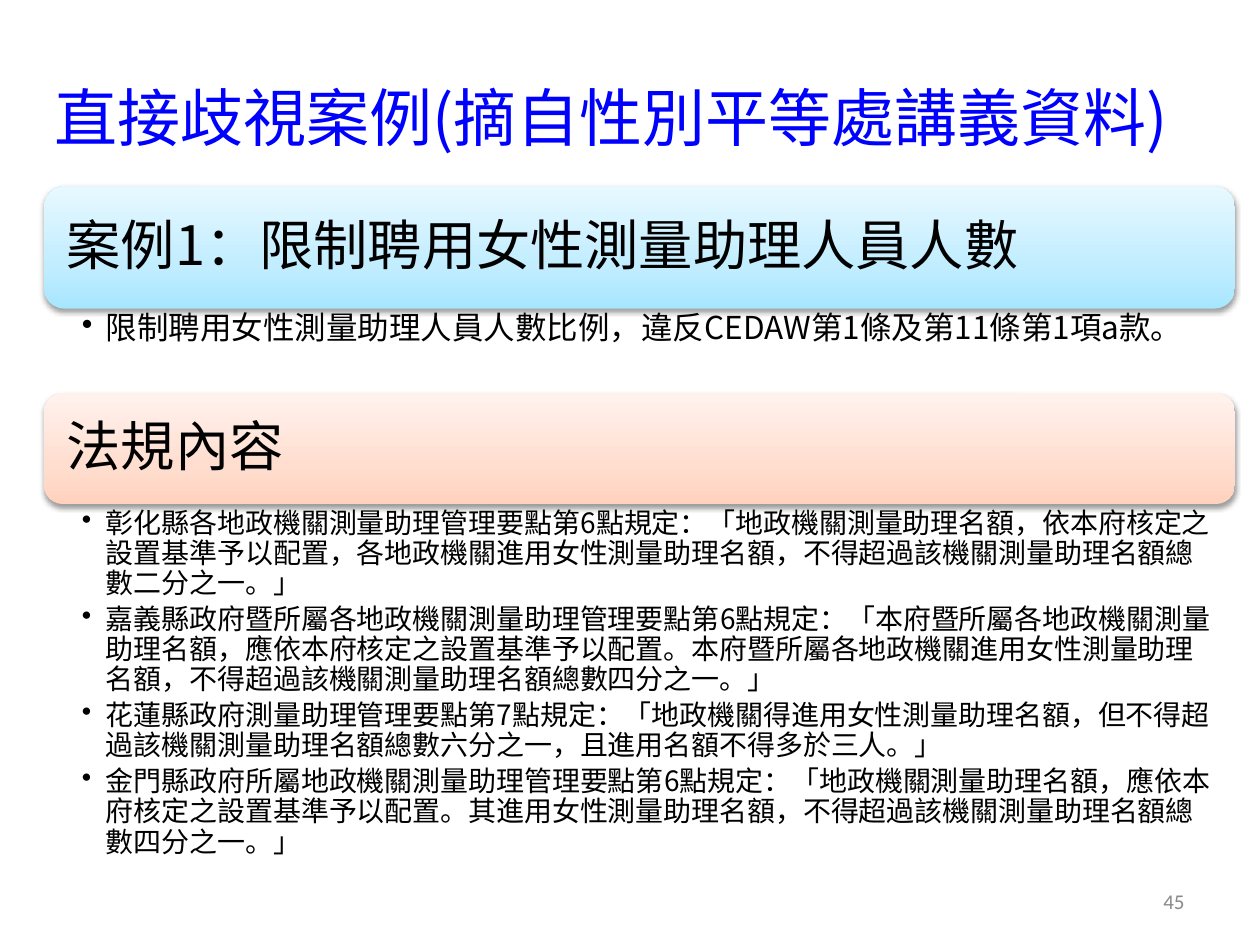
"""Build a slide on direct discrimination cases and the rules behind them."""
from lxml import etree
from pptx import Presentation
from pptx.dml.color import RGBColor
from pptx.enum.shapes import MSO_SHAPE
from pptx.enum.text import MSO_ANCHOR, MSO_AUTO_SIZE, PP_ALIGN
from pptx.oxml import parse_xml
from pptx.oxml.ns import qn
from pptx.util import Inches, Pt

ROUNDED = MSO_SHAPE.ROUNDED_RECTANGLE
TOP, MIDDLE = MSO_ANCHOR.TOP, MSO_ANCHOR.MIDDLE
LEFT, CENTER, RIGHT = PP_ALIGN.LEFT, PP_ALIGN.CENTER, PP_ALIGN.RIGHT
BLACK = RGBColor(0, 0, 0)
BLUE = RGBColor(0, 0, 255)
GRAY = RGBColor(0x89, 0x89, 0x89)
CJK = "Noto Sans CJK SC"
DRAWING = "http://schemas.openxmlformats.org/drawingml/2006/main"

TITLE = "直接歧視案例(摘自性別平等處講義資料)"
PAGE_NUMBER = "45"
SECTIONS = [
    {
        "heading": "案例1：限制聘用女性測量助理人員人數",
        "bar": (1.48, 0.97),
        "colors": ("A7E6FF", "C1EDFF", "E7F8FF"),
        "body": (2.45, 0.69),
        "size": 18,
        "insets": (0.3, 0.03, 0.14, 0.03),
        "points": ["限制聘用女性測量助理人員人數比例，違反CEDAW第1條及第11條第1項a款。"],
    },
    {
        "heading": "法規內容",
        "bar": (3.12, 0.88),
        "colors": ("FFD2BD", "FFDED0", "FFF2ED"),
        "body": (4.02, 3.1),
        "size": 16,
        "insets": (0.3, 0.02, 0.12, 0.02),
        "points": [
            "彰化縣各地政機關測量助理管理要點第6點規定：「地政機關測量助理名額，依本府核定之設置基準予以配置，各地政機關進用女性測量助理名額，不得超過該機關測量助理名額總數二分之一。」",
            "嘉義縣政府暨所屬各地政機關測量助理管理要點第6點規定：「本府暨所屬各地政機關測量助理名額，應依本府核定之設置基準予以配置。本府暨所屬各地政機關進用女性測量助理名額，不得超過該機關測量助理名額總數四分之一。」",
            "花蓮縣政府測量助理管理要點第7點規定：「地政機關得進用女性測量助理名額，但不得超過該機關測量助理名額總數六分之一，且進用名額不得多於三人。」",
            "金門縣政府所屬地政機關測量助理管理要點第6點規定：「地政機關測量助理名額，應依本府核定之設置基準予以配置。其進用女性測量助理名額，不得超過該機關測量助理名額總數四分之一。」",
        ],
    },
]
BAR_LEFT, BAR_WIDTH, BAR_PADDING = 0.35, 9.45, 0.05
BULLET_INDENT = 0.19


def write_text(box, lines, size, color=BLACK, font=CJK, align=LEFT, anchor=TOP,
               insets=(0.1, 0.05, 0.1, 0.05), spacing=None, after=0, bullet=False):
    frame = box.text_frame
    frame.word_wrap = True
    frame.auto_size = MSO_AUTO_SIZE.NONE
    frame.vertical_anchor = anchor
    (frame.margin_left, frame.margin_top,
     frame.margin_right, frame.margin_bottom) = map(Inches, insets)
    for index, line in enumerate(lines):
        para = frame.add_paragraph() if index else frame.paragraphs[0]
        para.alignment = align
        para.space_after = Pt(after)
        if spacing:
            para.line_spacing = spacing
        if bullet:
            para.level = 1
            properties = para._p.get_or_add_pPr()
            properties.set("marL", str(Inches(BULLET_INDENT)))
            properties.set("indent", str(-Inches(BULLET_INDENT)))
            etree.SubElement(properties, qn("a:buChar"), char="•")
        span = para.add_run()
        span.text = line
        span.font.size = Pt(size)
        span.font.name = font
        span.font.color.rgb = color
        etree.SubElement(span._r.get_or_add_rPr(), qn("a:ea"), typeface=font)


def add_text(page, place, lines, **style):
    box = page.shapes.add_textbox(*map(Inches, place))
    write_text(box, lines, **style)


def add_bar(page, place, colors):
    bar = page.shapes.add_shape(ROUNDED, *map(Inches, place))
    bar.line.fill.background()
    bar.shadow.inherit = False
    stops = "".join(
        f'<a:gs pos="{position}"><a:srgbClr val="{color}"/></a:gs>'
        for position, color in zip((0, 35000, 100000), colors))
    gradient = parse_xml(
        f'<a:gradFill xmlns:a="{DRAWING}" rotWithShape="1"><a:gsLst>{stops}</a:gsLst>'
        '<a:lin ang="16200000" scaled="0"/></a:gradFill>')
    shadow = parse_xml(
        f'<a:outerShdw xmlns:a="{DRAWING}" blurRad="{Pt(3.1)}" dist="{Pt(1.6)}" '
        'dir="5400000" rotWithShape="0"><a:srgbClr val="000000">'
        '<a:alpha val="38000"/></a:srgbClr></a:outerShdw>')
    properties = bar._element.spPr
    properties.find(qn("a:prstGeom")).addnext(gradient)
    properties.find(qn("a:effectLst")).append(shadow)


def add_section(page, section):
    top, height = section["bar"]
    add_bar(page, (BAR_LEFT, top, BAR_WIDTH, height), section["colors"])
    inner = (BAR_LEFT + BAR_PADDING, top + BAR_PADDING,
             BAR_WIDTH - 2 * BAR_PADDING, height - 2 * BAR_PADDING)
    add_text(page, inner, [section["heading"]], size=31, anchor=MIDDLE,
             insets=(0.13,) * 4, spacing=0.9)
    top, height = section["body"]
    size = section["size"]
    add_text(page, (BAR_LEFT, top, BAR_WIDTH, height), section["points"], size=size,
             insets=section["insets"], spacing=0.9, after=round(size * 0.2, 1), bullet=True)


def main():
    deck = Presentation()
    deck.slide_width, deck.slide_height = Inches(10), Inches(7.5)
    page = deck.slides.add_slide(deck.slide_layouts[5])
    title = page.shapes.title
    title.left, title.top, title.width, title.height = map(Inches, (0.2, 0.3, 9.3, 1.25))
    write_text(title, [TITLE], size=36, color=BLUE, align=CENTER, anchor=MIDDLE)
    add_text(page, (7.17, 6.95, 2.33, 0.4), [PAGE_NUMBER], size=12, color=GRAY,
             font="Calibri", align=RIGHT, anchor=MIDDLE)
    for section in SECTIONS:
        add_section(page, section)
    deck.save("out.pptx")


if __name__ == "__main__":
    main()
